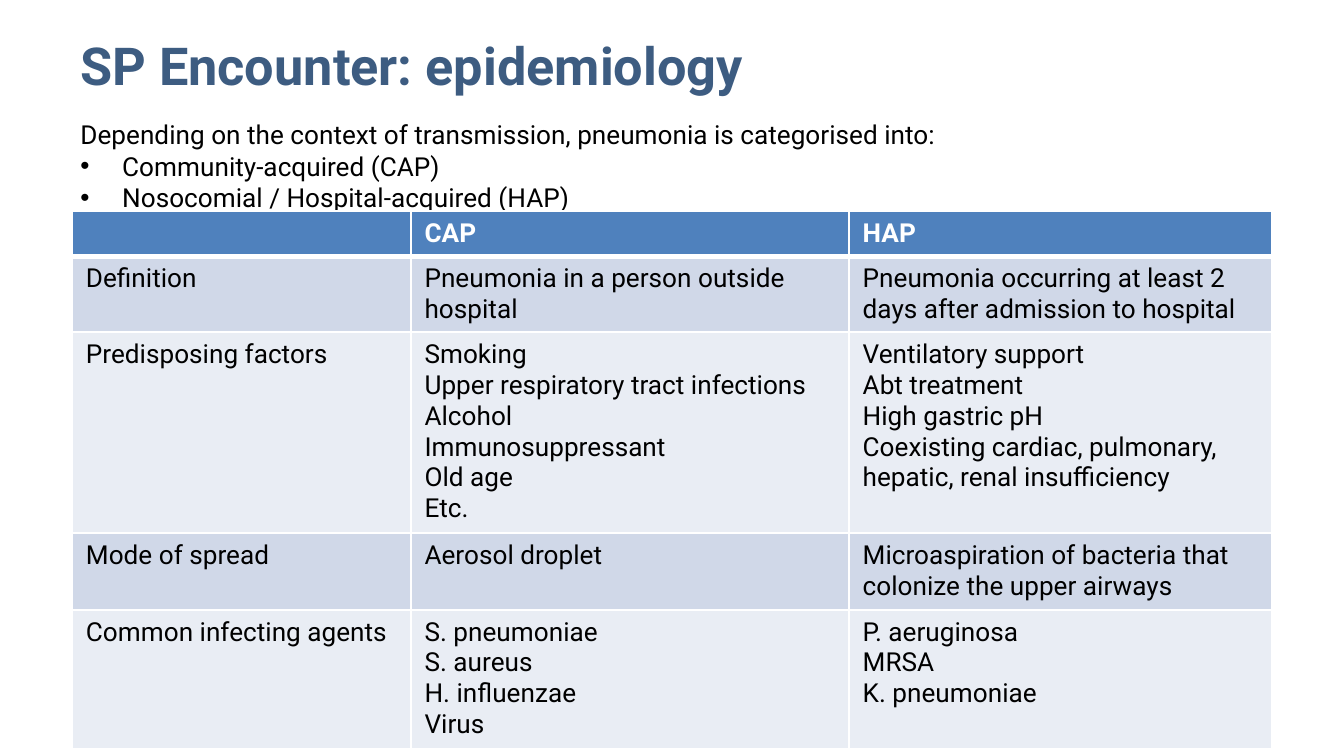
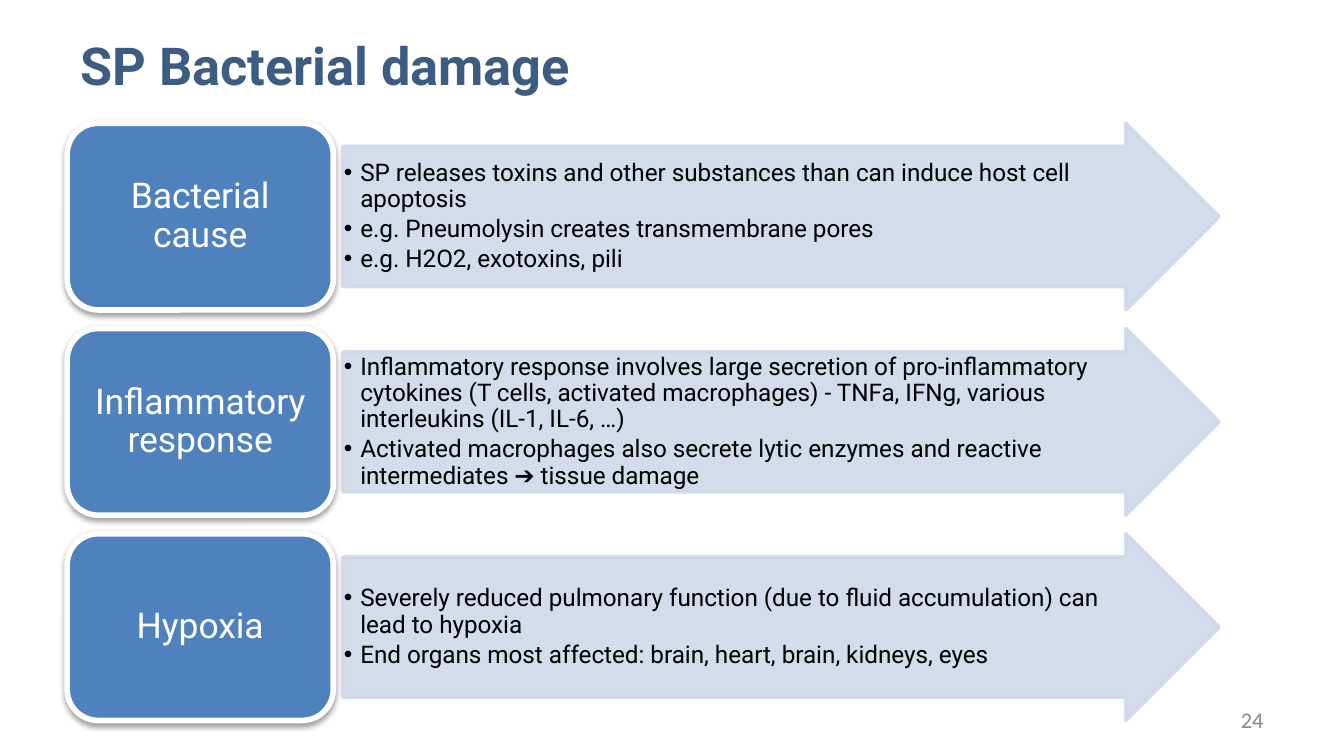
from lxml import etree
from pptx import Presentation
from pptx.dml.color import RGBColor
from pptx.enum.shapes import MSO_SHAPE
from pptx.enum.text import MSO_ANCHOR, MSO_AUTO_SIZE, PP_ALIGN
from pptx.oxml.ns import qn
from pptx.util import Cm, Pt

# Enum members
ARROW = MSO_SHAPE.RIGHT_ARROW
ROUNDED = MSO_SHAPE.ROUNDED_RECTANGLE
TOP, MIDDLE = MSO_ANCHOR.TOP, MSO_ANCHOR.MIDDLE
LEFT, CENTER, RIGHT = PP_ALIGN.LEFT, PP_ALIGN.CENTER, PP_ALIGN.RIGHT
NO_AUTOFIT = MSO_AUTO_SIZE.NONE

# Shared colours
NAVY = RGBColor(0x3D, 0x5C, 0x81)
BLUE = RGBColor(0x4F, 0x81, 0xBD)
BAND_DARK = RGBColor(0xD0, 0xD8, 0xE8)
BAND_LIGHT = RGBColor(0xE9, 0xED, 0xF4)
GREY = RGBColor(0x88, 0x88, 0x88)
BLACK = RGBColor(0, 0, 0)
WHITE = RGBColor(0xFF, 0xFF, 0xFF)

# Shared text formats
TITLE_FONT = dict(name="Roboto", size=Pt(28), bold=True)
BODY_FONT = dict(name="Roboto", size=Pt(14), bold=False)
HEADER_FONT = dict(name="Roboto", size=Pt(14), bold=True)
STAGE_FONT = dict(name="Roboto", size=Pt(19))
EFFECT_FONT = dict(name="Roboto", size=Pt(13))
NUMBER_FONT = dict(name="Calibri", size=Pt(12))

# Content
INTRO = "Depending on the context of transmission, pneumonia is categorised into:"
CATEGORIES = ["Community-acquired (CAP)", "Nosocomial / Hospital-acquired (HAP)"]
COLUMN_WIDTHS = [6.4, 8.28, 7.98]
ROW_HEIGHTS = [0.86, 1.43, 3.8, 1.45, 2.62]
COMPARISON = [
    ["", "CAP", "HAP"],
    ["Definition", "Pneumonia in a person outside hospital",
     "Pneumonia occurring at least 2 days after admission to hospital"],
    ["Predisposing factors",
     "Smoking\nUpper respiratory tract infections\nAlcohol\n"
     "Immunosuppressant\nOld age\nEtc.",
     "Ventilatory support\nAbt treatment\nHigh gastric pH\n"
     "Coexisting cardiac, pulmonary, hepatic, renal insufficiency"],
    ["Mode of spread", "Aerosol droplet",
     "Microaspiration of bacteria that colonize the upper airways"],
    ["Common infecting agents",
     "S. pneumoniae\nS. aureus\nH. influenzae\nVirus",
     "P. aeruginosa\nMRSA\nK. pneumoniae"],
]
DAMAGE_STAGES = [
    ("Bacterial cause", [
        "SP releases toxins and other substances than can induce host cell apoptosis",
        "e.g. Pneumolysin creates transmembrane pores",
        "e.g. H2O2, exotoxins, pili"]),
    ("Inflammatory response", [
        "Inflammatory response involves large secretion of pro-inflammatory "
        "cytokines (T cells, activated macrophages) - TNFa, IFNg, various "
        "interleukins (IL-1, IL-6, …)",
        "Activated macrophages also secrete lytic enzymes and reactive "
        "intermediates ➔ tissue damage"]),
    ("Hypoxia", [
        "Severely reduced pulmonary function (due to fluid accumulation) can "
        "lead to hypoxia",
        "End organs most affected: brain, heart, brain, kidneys, eyes"]),
]
STAGE_TOP, STAGE_PITCH, STAGE_HEIGHT = 2.33, 3.88, 3.53


def apply_format(target, values):
    for key, value in values.items():
        setattr(target, key, value)


def place(shape, left, top, width, height):
    apply_format(shape, dict(left=Cm(left), top=Cm(top),
                             width=Cm(width), height=Cm(height)))


def set_frame(frame, anchor, side, vertical):
    apply_format(frame, dict(
        word_wrap=True, auto_size=NO_AUTOFIT, vertical_anchor=anchor,
        margin_left=Cm(side), margin_right=Cm(side),
        margin_top=Cm(vertical), margin_bottom=Cm(vertical)))


def set_bullet(paragraph, indent):
    """Give a hanging bullet, or none when the indent is 0."""
    properties = paragraph._p.get_or_add_pPr()
    properties.set("marL", str(Cm(indent)))
    properties.set("indent", str(-Cm(indent)))
    if indent:
        font = etree.SubElement(properties, qn("a:buFont"))
        font.set("typeface", "Arial")
        etree.SubElement(properties, qn("a:buChar")).set("char", "•")
    else:
        etree.SubElement(properties, qn("a:buNone"))


def write(frame, lines, font, color, indents=None, **paragraph_format):
    frame.text = "\n".join(lines)
    for index, paragraph in enumerate(frame.paragraphs):
        if indents:
            set_bullet(paragraph, indents[index])
        apply_format(paragraph, paragraph_format)
        for run in paragraph.runs:
            apply_format(run.font, font)
            run.font.color.rgb = color
        if not paragraph.runs:
            ending = paragraph._p.get_or_add_endParaRPr()
            ending.set("sz", str(int(font["size"].pt * 100)))


def add_titled_slide(deck, layout, heading):
    slide = deck.slides.add_slide(deck.slide_layouts[layout])
    title = slide.shapes.title
    place(title, 1.27, 0.38, 22.86, 1.7)
    set_frame(title.text_frame, MIDDLE, 0.25, 0.25)
    write(title.text_frame, [heading], TITLE_FONT, NAVY, alignment=LEFT)
    return slide


def add_borders(cell, bottom_width):
    properties = cell._tc.get_or_add_tcPr()
    widths = [("a:lnL", 1), ("a:lnR", 1), ("a:lnT", 1), ("a:lnB", bottom_width)]
    for position, (side, width) in enumerate(widths):
        border = etree.Element(qn(side), w=str(Pt(width)))
        fill = etree.SubElement(border, qn("a:solidFill"))
        etree.SubElement(fill, qn("a:srgbClr"), val=str(WHITE))
        properties.insert(position, border)


def add_comparison(slide):
    table = slide.shapes.add_table(
        len(ROW_HEIGHTS), len(COLUMN_WIDTHS), Cm(1.37), Cm(3.99),
        Cm(sum(COLUMN_WIDTHS)), Cm(sum(ROW_HEIGHTS))).table
    table.horz_banding = False
    for column, width in zip(table.columns, COLUMN_WIDTHS):
        column.width = Cm(width)
    for index, (row, height) in enumerate(zip(table.rows, ROW_HEIGHTS)):
        row.height = Cm(height)
        header = index == 0
        band = BAND_DARK if index % 2 else BAND_LIGHT
        for cell, text in zip(row.cells, COMPARISON[index]):
            cell.fill.solid()
            cell.fill.fore_color.rgb = BLUE if header else band
            # The rule under the header is drawn by both neighbouring rows
            add_borders(cell, 3 if header else 1)
            if index == 1:
                cell._tc.tcPr.find(qn("a:lnT")).set("w", str(Pt(3)))
            write(cell.text_frame, text.split("\n"),
                  HEADER_FONT if header else BODY_FONT,
                  WHITE if header else BLACK)


def add_block(slide, preset, box, fill, line, line_width):
    block = slide.shapes.add_shape(preset, *map(Cm, box))
    block.shadow.inherit = False
    block.fill.solid()
    block.fill.fore_color.rgb = fill
    block.line.color.rgb = line
    block.line.width = Pt(line_width)
    return block


def add_effects_arrow(slide, top, effects):
    arrow = add_block(slide, ARROW, (6.48, top, 16.56, STAGE_HEIGHT),
                      BAND_DARK, BAND_DARK, 2)
    arrow.adjustments[0] = 0.75
    for color in arrow._element.spPr.iter(qn("a:srgbClr")):
        etree.SubElement(color, qn("a:alpha"), val="90000")
    set_frame(arrow.text_frame, MIDDLE, 0.02, 0.02)
    write(arrow.text_frame, effects, EFFECT_FONT, BLACK,
          indents=[0.31] * len(effects), alignment=LEFT,
          line_spacing=0.9, space_after=Pt(2))


def add_stage_label(slide, top, stage):
    label = add_block(slide, ROUNDED, (1.27, top, 5.03, STAGE_HEIGHT),
                      BLUE, WHITE, 3)
    effects = label._element.spPr.find(qn("a:effectLst"))
    shadow = etree.SubElement(effects, qn("a:outerShdw"), blurRad="40000",
                              dist="20000", dir="5400000", rotWithShape="0")
    color = etree.SubElement(shadow, qn("a:srgbClr"), val=str(BLACK))
    etree.SubElement(color, qn("a:alpha"), val="38000")
    set_frame(label.text_frame, MIDDLE, 0.2, 0.1)
    write(label.text_frame, [stage], STAGE_FONT, WHITE, alignment=CENTER,
          line_spacing=0.9, space_after=Pt(7))


def add_page_number(slide, number):
    page_number = slide.shapes.add_textbox(Cm(18.21), Cm(13.23), Cm(5.92), Cm(0.76))
    set_frame(page_number.text_frame, MIDDLE, 0.25, 0.13)
    write(page_number.text_frame, [number], NUMBER_FONT, GREY, alignment=RIGHT)


def main():
    deck = Presentation()
    deck.slide_width, deck.slide_height = Cm(25.4), Cm(14.29)

    # Epidemiology: categories and comparison table
    epidemiology = add_titled_slide(deck, 1, "SP Encounter: epidemiology")
    intro = epidemiology.placeholders[1]
    place(intro, 1.27, 2.11, 22.86, 2.06)
    set_frame(intro.text_frame, TOP, 0.25, 0.13)
    write(intro.text_frame, [INTRO, *CATEGORIES], BODY_FONT, BLACK,
          indents=[0, 0.79, 0.79], space_before=Pt(0))
    add_comparison(epidemiology)

    # Bacterial damage: one label and arrow per stage
    damage = add_titled_slide(deck, 5, "SP Bacterial damage")
    add_page_number(damage, "24")
    for index, (stage, effects) in enumerate(DAMAGE_STAGES):
        top = STAGE_TOP + index * STAGE_PITCH
        add_effects_arrow(damage, top, effects)
        add_stage_label(damage, top, stage)

    deck.save("out.pptx")


if __name__ == "__main__":
    main()
